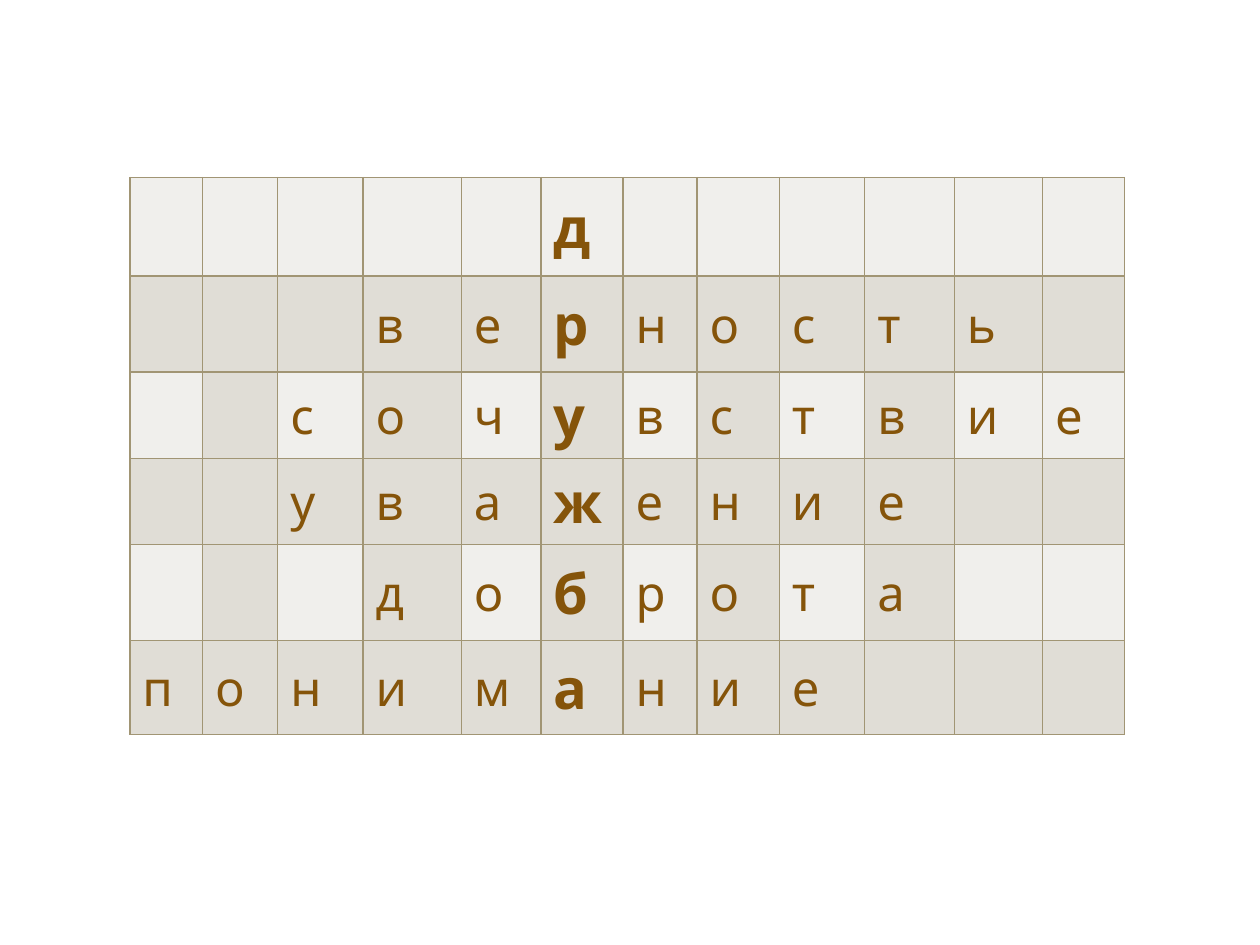
from pptx import Presentation
from pptx.dml.color import RGBColor as RGB
from pptx.enum.text import MSO_ANCHOR as Anchor
from pptx.oxml import parse_xml
from pptx.oxml.ns import nsdecls
from pptx.util import Pt

BROWN = RGB(0x85, 0x54, 0x0A)
LINE = RGB(0xA1, 0x95, 0x74)
LIGHT = RGB(0xF0, 0xEF, 0xEC)
DARK = RGB(0xE0, 0xDD, 0xD6)

KEY = 5
WORDS = [(5, "д"), (3, "верность"), (2, "сочувствие"),
         (2, "уважение"), (3, "доброта"), (0, "понимание")]
WIDTHS = [41.5, 43, 48.8, 56.2, 45.5, 46.8, 42.4, 47, 48.8, 51.2, 50.4, 47]
HEIGHTS = [56.2, 54.8, 49.4, 49.4, 54.8, 53.6]


def put_text(cell, text, size=28, bold=False, color=BROWN, font="Karla"):
    para = cell.text_frame.paragraphs[0]
    para.line_spacing = 1.1
    run = para.add_run()
    run.text = text
    run.font.name = font
    run.font.size = Pt(size)
    run.font.bold = bold
    run.font.color.rgb = color


def add_edges(cell):
    props = cell._tc.get_or_add_tcPr()
    for side in "LRTB":
        props.append(parse_xml(
            f'<a:ln{side} {nsdecls("a")} w="{Pt(1)}"><a:solidFill>'
            f'<a:srgbClr val="{LINE}"/></a:solidFill></a:ln{side}>'))


def style_cell(cell, fill):
    cell.margin_top = cell.margin_bottom = 0
    cell.vertical_anchor = Anchor.MIDDLE
    add_edges(cell)
    cell.fill.solid()
    cell.fill.fore_color.rgb = fill


def pick_fill(row, col):
    band = row > 0 and col % 2 and col < len(WIDTHS) - 1
    return DARK if row % 2 or band else LIGHT


def add_grid(slide):
    frame = slide.shapes.add_table(
        len(HEIGHTS), len(WIDTHS), Pt(74.2), Pt(101.5),
        Pt(sum(WIDTHS)), Pt(sum(HEIGHTS)))
    table = frame.table
    for col, width in zip(table.columns, WIDTHS):
        col.width = Pt(width)
    for row, height in zip(table.rows, HEIGHTS):
        row.height = Pt(height)
    for row in range(len(HEIGHTS)):
        for col in range(len(WIDTHS)):
            style_cell(table.cell(row, col), pick_fill(row, col))
    for row, (start, word) in enumerate(WORDS):
        for col, char in enumerate(word, start):
            key = col == KEY
            put_text(table.cell(row, col), char,
                     size=32 if key else 28, bold=key)


def main():
    deck = Presentation()
    deck.slide_width, deck.slide_height = Pt(720), Pt(540)
    slide = deck.slides.add_slide(deck.slide_layouts[6])
    add_grid(slide)
    deck.save("out.pptx")


if __name__ == "__main__":
    main()
